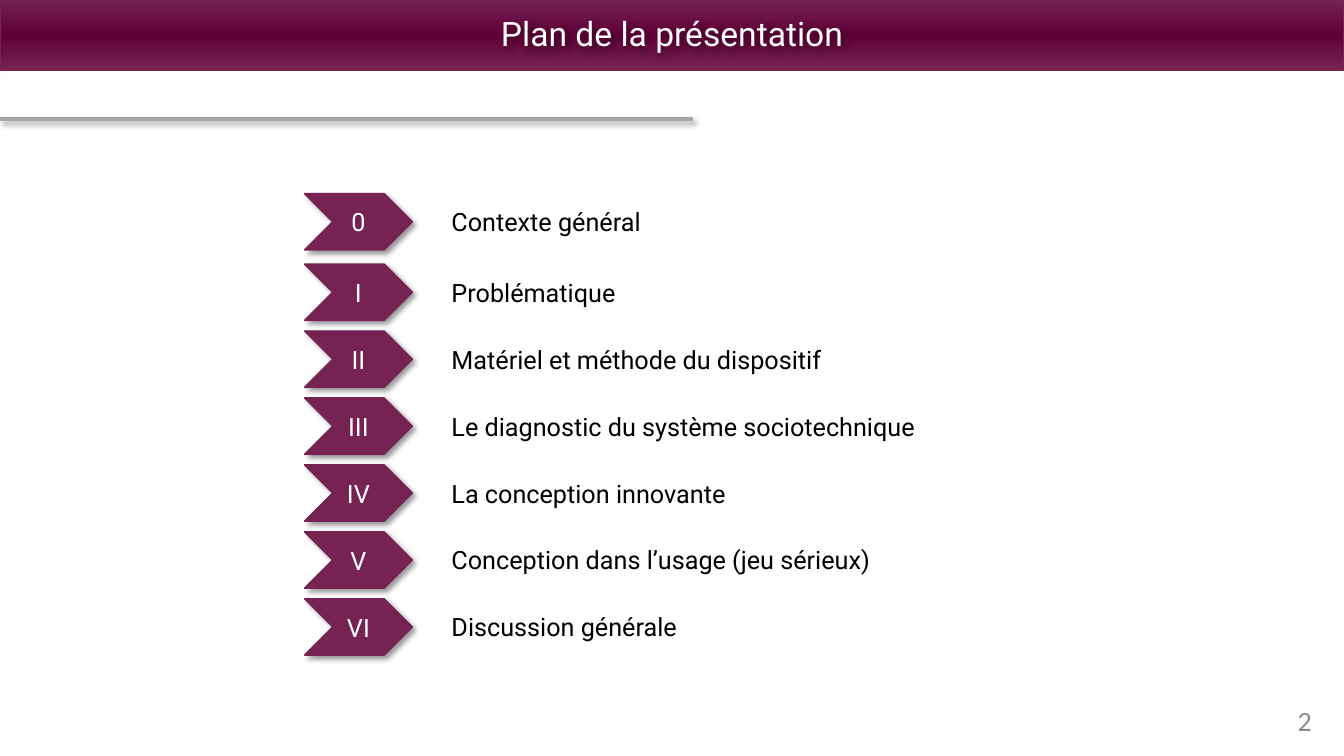
"""Builds the outline slide of a presentation: title band and numbered chapters."""
import pptx
import pptx.util
import pptx.dml.color
import pptx.enum.shapes
import pptx.enum.text
import pptx.oxml
import pptx.oxml.ns

Inches = pptx.util.Inches
ALIGN = pptx.enum.text.PP_ALIGN
ANCHOR = pptx.enum.text.MSO_ANCHOR
SHAPE = pptx.enum.shapes.MSO_SHAPE

TITLE = "Plan de la présentation"
PAGE_NUMBER = "2"
CHAPTERS = [
    ("0", "Contexte général"),
    ("I", "Problématique"),
    ("II", "Matériel et méthode du dispositif"),
    ("III", "Le diagnostic du système sociotechnique"),
    ("IV", "La conception innovante"),
    ("V", "Conception dans l’usage (jeu sérieux)"),
    ("VI", "Discussion générale"),
]
COLORS = {"plum": "762354", "wine": "610039", "rule": "A6A6A6",
          "page": "8C8C8C", "white": "FFFFFF", "black": "000000"}
TITLE_TEXT = {"size": 24, "name": "Roboto", "color": "white"}
NUMERAL_TEXT = {"size": 18, "name": "Roboto", "color": "white"}
CHAPTER_TEXT = {"size": 18, "name": "Roboto", "color": "black"}
PAGE_TEXT = {"size": 20, "name": "Calibri", "color": "page"}
BAND_STOPS = [(0, 85), (50, 100), (100, 85)]
FIRST_TOP, SECOND_TOP, PITCH = 1.92, 2.62, 0.664
NUMERAL_LEFT, NUMERAL_WIDTH, NUMERAL_HEIGHT = 3.02, 1.07, 0.56
CHAPTER_LEFT, CHAPTER_WIDTH, CHAPTER_HEIGHT = 4.38, 7.63, 0.4


def rgb(color):
    return pptx.dml.color.RGBColor.from_string(COLORS[color])


def box(left, top, width, height):
    return [Inches(value) for value in (left, top, width, height)]


def outline(part, color, width):
    part.line.color.rgb = rgb(color)
    part.line.width = pptx.util.Pt(width)


def cast_shadow(part):
    part.element.spPr.append(pptx.oxml.parse_xml(
        f'<a:effectLst {pptx.oxml.ns.nsdecls("a")}>'
        '<a:outerShdw blurRad="50800" dist="38100" dir="2700000" algn="tl" rotWithShape="0">'
        f'<a:srgbClr val="{COLORS["black"]}"><a:alpha val="40000"/></a:srgbClr>'
        '</a:outerShdw></a:effectLst>'))


def write(part, text, style, align, anchor):
    frame = part.text_frame
    frame.text = text
    frame_format = {"word_wrap": True, "vertical_anchor": anchor,
                    "auto_size": pptx.enum.text.MSO_AUTO_SIZE.NONE}
    for key, value in frame_format.items():
        setattr(frame, key, value)
    paragraph = frame.paragraphs[0]
    paragraph.alignment = align
    font = paragraph.runs[0].font
    font_format = {"size": pptx.util.Pt(style["size"]), "name": style["name"]}
    for key, value in font_format.items():
        setattr(font, key, value)
    font.color.rgb = rgb(style["color"])
    return paragraph


def add_band(slide):
    band = slide.shapes.add_shape(SHAPE.RECTANGLE, *box(0, 0, 13.33, 0.69))
    band.shadow.inherit = False
    outline(band, "plum", 1)
    stops = "".join(
        f'<a:gs pos="{position * 1000}"><a:srgbClr val="{COLORS["wine"]}">'
        f'<a:alpha val="{opacity * 1000}"/></a:srgbClr></a:gs>'
        for position, opacity in BAND_STOPS)
    band.element.spPr.find(pptx.oxml.ns.qn("a:prstGeom")).addnext(pptx.oxml.parse_xml(
        f'<a:gradFill {pptx.oxml.ns.nsdecls("a")} rotWithShape="1"><a:gsLst>{stops}</a:gsLst>'
        '<a:lin ang="16200000" scaled="0"/></a:gradFill>'))
    return band


def add_title(slide, band):
    title = slide.shapes.title
    band.element.addnext(title.element)
    places = zip(("left", "top", "width", "height"), box(0, 0, 13.33, 0.7))
    for key, value in places:
        setattr(title, key, value)
    title.fill.background()
    outline(title, "plum", 0.75)
    cast_shadow(title)
    write(title, TITLE, TITLE_TEXT, ALIGN.CENTER, ANCHOR.MIDDLE).line_spacing = 0.9


def add_rule(slide):
    rule = slide.shapes.add_connector(
        pptx.enum.shapes.MSO_CONNECTOR.STRAIGHT, *box(0, 1.18, 6.87, 1.18))
    outline(rule, "rule", 2.25)
    cast_shadow(rule)


def add_chapter(slide, top, numeral, chapter):
    chevron = slide.shapes.add_shape(
        SHAPE.CHEVRON, *box(NUMERAL_LEFT, top, NUMERAL_WIDTH, NUMERAL_HEIGHT))
    chevron.fill.solid()
    chevron.fill.fore_color.rgb = rgb("plum")
    outline(chevron, "plum", 1)
    cast_shadow(chevron)
    write(chevron, numeral, NUMERAL_TEXT, ALIGN.CENTER, ANCHOR.MIDDLE)
    label_top = top + (NUMERAL_HEIGHT - CHAPTER_HEIGHT) / 2
    label = slide.shapes.add_textbox(
        *box(CHAPTER_LEFT, label_top, CHAPTER_WIDTH, CHAPTER_HEIGHT))
    write(label, chapter, CHAPTER_TEXT, ALIGN.LEFT, ANCHOR.TOP)


def main():
    deck = pptx.Presentation()
    deck.slide_width, deck.slide_height = Inches(13.33), Inches(7.5)
    slide = deck.slides.add_slide(deck.slide_layouts.get_by_name("Title Only"))
    add_title(slide, add_band(slide))
    add_rule(slide)
    page = slide.shapes.add_textbox(*box(11.77, 6.95, 1.34, 0.4))
    write(page, PAGE_NUMBER, PAGE_TEXT, ALIGN.RIGHT, ANCHOR.MIDDLE)
    for index, (numeral, chapter) in enumerate(CHAPTERS):
        top = SECOND_TOP + (index - 1) * PITCH if index else FIRST_TOP
        add_chapter(slide, top, numeral, chapter)
    deck.save("out.pptx")


if __name__ == "__main__":
    main()
